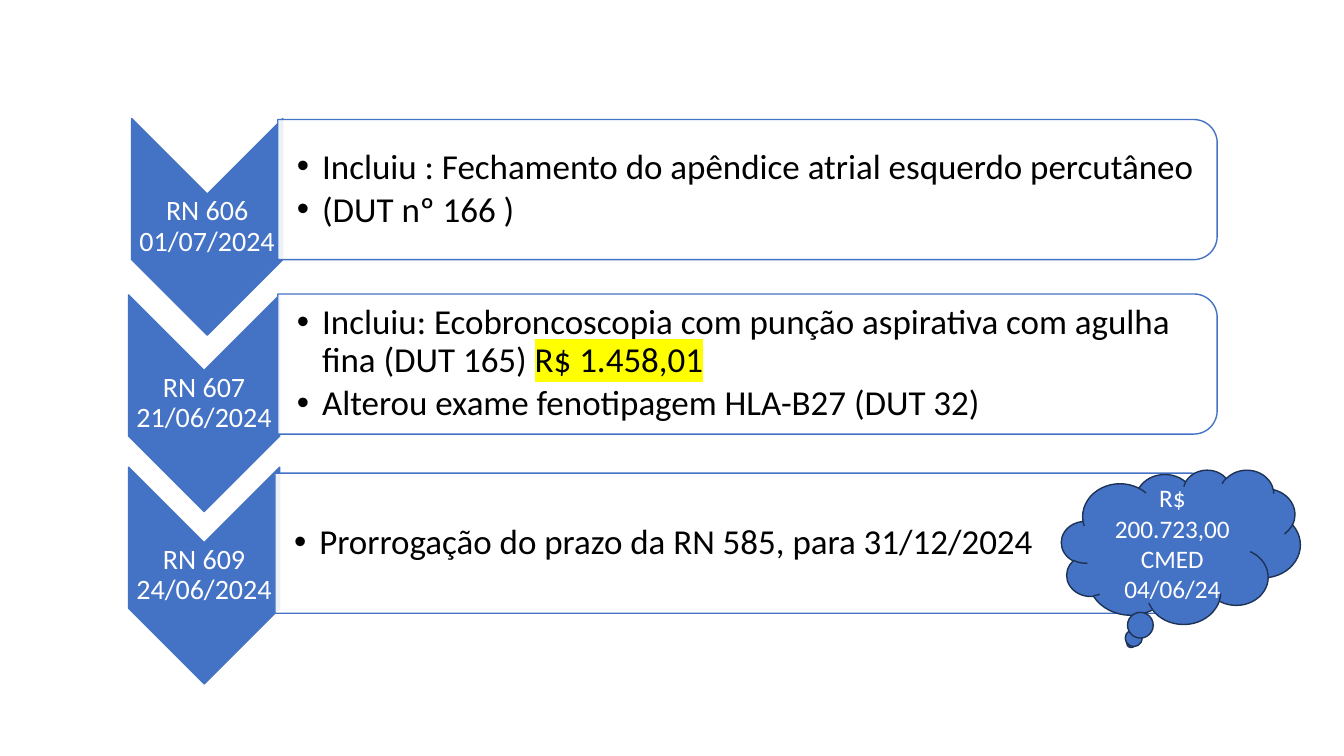
"""Builds a slide with three dated chevrons, their bulleted cards and a cloud callout."""
import pptx
import pptx.util
import pptx.dml.color
import pptx.enum.shapes
import pptx.enum.text
import pptx.oxml.ns
from lxml import etree

Pt = pptx.util.Pt
RGB = pptx.dml.color.RGBColor
KIND = pptx.enum.shapes.MSO_SHAPE
ALIGN = pptx.enum.text.PP_ALIGN
MIDDLE = pptx.enum.text.MSO_ANCHOR.MIDDLE
qn = pptx.oxml.ns.qn

BLUE, NAVY = RGB(0x44, 0x72, 0xC4), RGB(0x1E, 0x32, 0x56)
WHITE, BLACK = RGB(255, 255, 255), RGB(0, 0, 0)
YELLOW = "FFFF00"

ROWS = [
    {"label": "RN 606 01/07/2024", "chevron": (148, 162), "card": (198.4, 135.4),
     "points": [[("Incluiu : Fechamento do apêndice atrial esquerdo percutâneo", None)],
                [("(DUT nº 166 )", None)]]},
    {"label": "RN 607 21/06/2024", "chevron": (145.8, 288), "card": (198.4, 260),
     "points": [[("Incluiu: Ecobroncoscopia com punção aspirativa com agulha fina (DUT 165) ", None),
                 ("R$ 1.458,01", YELLOW)],
                [("Alterou exame fenotipagem HLA-B27 (DUT 32)", None)]]},
    {"label": "RN 609 24/06/2024", "chevron": (145.8, 411.1), "card": (196.4, 388),
     "points": [[("Prorrogação do prazo da RN 585, para 31/12/2024", None)]]},
]
PRICE = [[("R$ 200.723,00 CMED 04/06/24", None)]]
CLOUD = (758.2, 335.5, 170.6, 110.2)
CHEVRON, CARD = (154.8, 108), (100.1, 671)
LABEL, NOTE = (108, 46), (666, 90.7)


def around(x, y, size):
    """Return the frame of a given size centred on a point."""
    return x - size[0] / 2, y - size[1] / 2, *size


def shape(slide, kind, frame, fill, line, turn=0, alpha=None):
    """Add a filled preset shape."""
    item = slide.shapes.add_shape(kind, *map(Pt, frame))
    item.shadow.inherit = False
    item.rotation = turn
    item.fill.solid()
    item.fill.fore_color.rgb = fill
    item.line.color.rgb = line
    item.line.width = Pt(1)
    if alpha:
        tint = item.fill._xPr.find(qn("a:solidFill"))[0]
        etree.SubElement(tint, qn("a:alpha"), val=str(alpha * 1000))
    return item


def write(item, paras, size, color, align, bullet=False, **style):
    """Fill a shape with formatted paragraphs."""
    frame = item.text_frame
    frame.word_wrap = True
    frame.vertical_anchor = MIDDLE
    for i, runs in enumerate(paras):
        para = frame.paragraphs[0] if i == 0 else frame.add_paragraph()
        for name, value in {"alignment": align, **style}.items():
            setattr(para, name, value)
        if bullet:
            props = para._p.get_or_add_pPr()
            props.set("marL", str(Pt(18)))
            props.set("indent", str(-Pt(18)))
            etree.SubElement(props, qn("a:buFont"), typeface="Arial")
            etree.SubElement(props, qn("a:buChar"), char="•")
        for text, mark in runs:
            run = para.add_run()
            run.text = text
            for name, value in {"name": "Calibri", "size": Pt(size)}.items():
                setattr(run.font, name, value)
            run.font.color.rgb = color
            if mark:
                light = etree.Element(qn("a:highlight"))
                etree.SubElement(light, qn("a:srgbClr"), val=mark)
                run.font._rPr.find(qn("a:solidFill")).addnext(light)


def box(slide, frame, left, pad):
    """Add a text box with narrow margins."""
    item = slide.shapes.add_textbox(*map(Pt, frame))
    margins = {"left": left, "right": pad, "top": pad, "bottom": pad}
    for side, value in margins.items():
        setattr(item.text_frame, "margin_" + side, Pt(value))
    return item


def main():
    """Build and save the slide."""
    deck = pptx.Presentation()
    deck.slide_width, deck.slide_height = Pt(960), Pt(540)
    slide = deck.slides.add_slide(deck.slide_layouts[6])
    for row in ROWS:
        x, y = row["chevron"]
        left, mid = row["card"]
        shape(slide, KIND.CHEVRON, around(x, y, CHEVRON), BLUE, BLUE, 90)
        write(box(slide, around(x, y, LABEL), 0.9, 0.9), [[(row["label"], None)]],
              20, WHITE, ALIGN.CENTER, line_spacing=0.9)
        shape(slide, KIND.ROUND_2_SAME_RECTANGLE,
              around(left + CARD[1] / 2, mid, CARD), WHITE, BLUE, 90, 90)
        write(box(slide, around(left + NOTE[0] / 2, mid, NOTE), 13.7, 1.25), row["points"],
              25, BLACK, ALIGN.LEFT, True, line_spacing=0.9, space_after=Pt(3.75))
    cloud = shape(slide, KIND.CLOUD_CALLOUT, CLOUD, BLUE, NAVY)
    write(cloud, PRICE, 18, WHITE, ALIGN.CENTER)
    deck.save("out.pptx")


if __name__ == "__main__":
    main()
